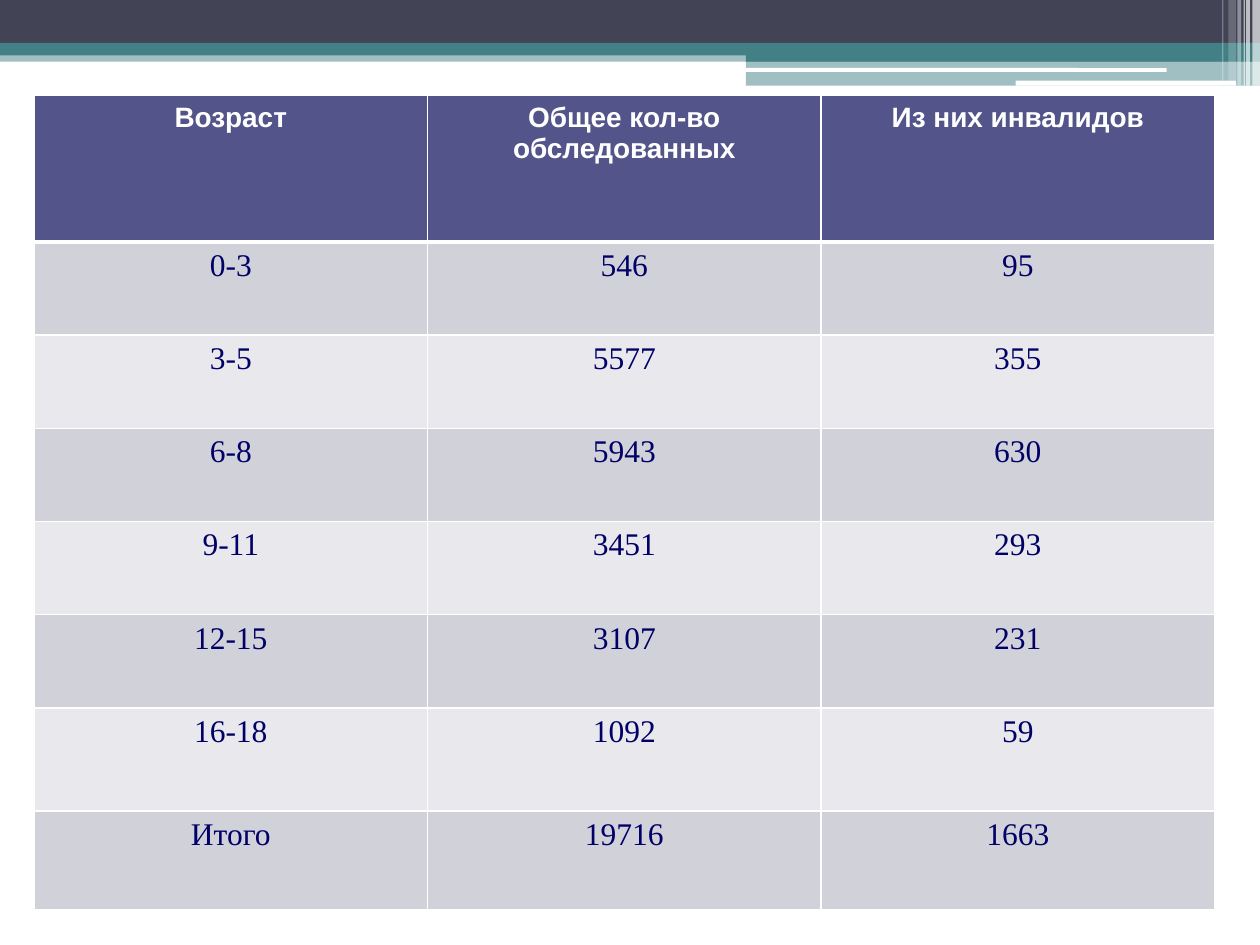
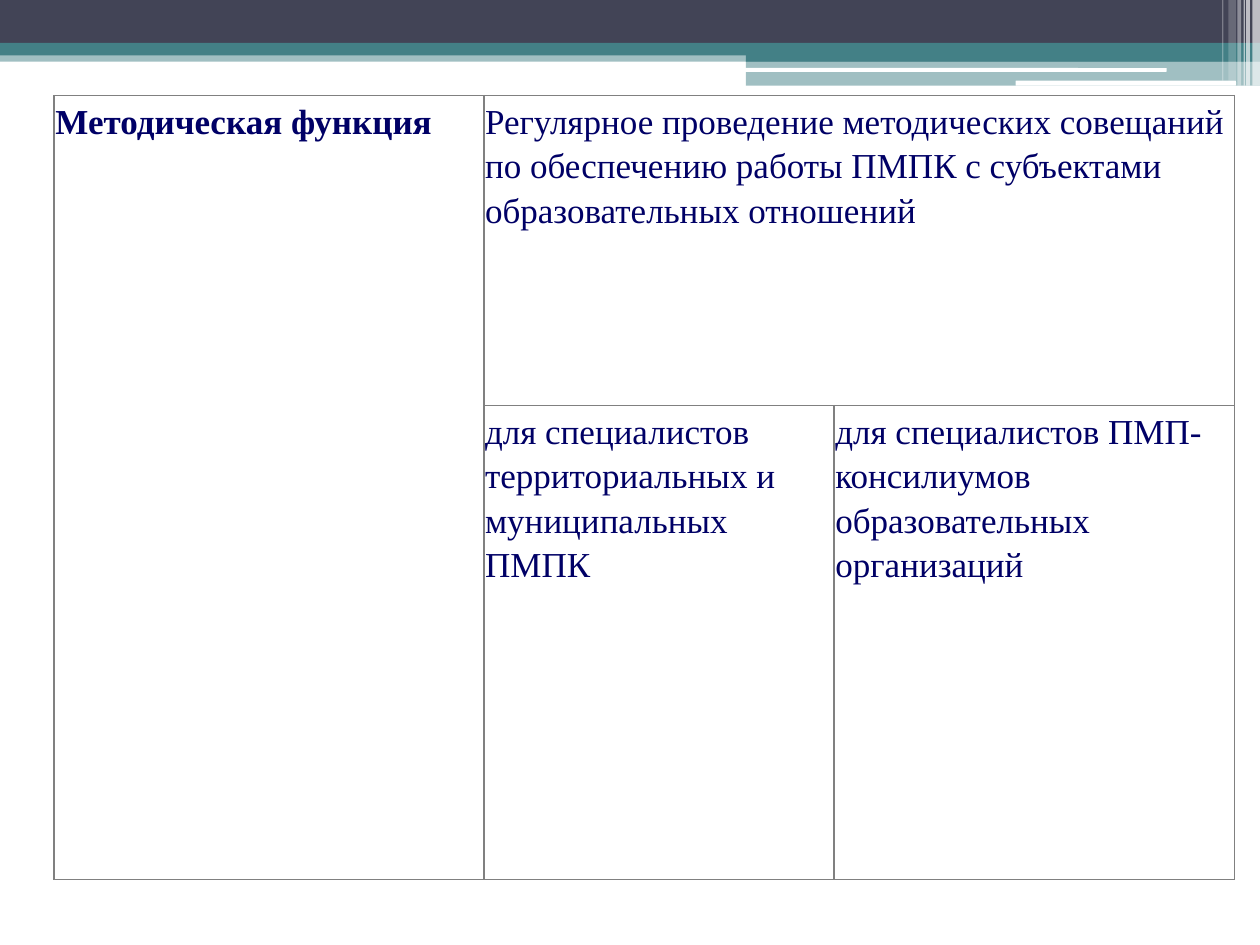
from pptx import Presentation
from pptx.dml.color import RGBColor
from pptx.enum.shapes import MSO_SHAPE as Preset
from pptx.enum.text import PP_ALIGN as Align
from pptx.oxml.ns import qn
from pptx.util import Inches, Pt
from lxml.etree import SubElement

COLORS = {
    "dark": "424456", "teal": "438086", "white": "FFFFFF", "header": "53548A",
    "odd_row": "D1D1DA", "even_row": "E9E9ED", "ink": "000066", "grid": "808080",
}
HEADER_FONT = {"name": "Arial", "size": Pt(16), "bold": True}
BODY_FONT = {"name": "Times New Roman", "size": Pt(18), "bold": False}
FUNCTION_FONT = BODY_FONT | {"size": Pt(20)}

BANDS = [
    (0, 0.4, 10, 0.09, "teal", 50),
    (0, 0, 10, 0.34, "dark", 100),
    (0, 0.34, 10, 0.1, "teal", 100),
    (5.92, 0.39, 4.08, 0.1, "teal", 100),
    (5.92, 0.48, 4.08, 0.2, "teal", 50),
]
WHITE_BARS = [(5.91, 0.54, 3.35, 0.03), (8.06, 0.64, 1.75, 0.04)]
STRIPES = [
    (9.94, 0.06, 0.68, 65), (9.89, 0.03, 0.68, 65), (9.87, 0.01, 0.68, 60),
    (9.82, 0.03, 0.68, 40), (9.75, 0.06, 0.64, 20), (9.7, 0.01, 0.64, 30),
]

AGE_ROWS = [
    ("Возраст", "Общее кол-во обследованных", "Из них инвалидов"),
    ("0-3", "546", "95"),
    ("3-5", "5577", "355"),
    ("6-8", "5943", "630"),
    ("9-11", "3451", "293"),
    ("12-15", "3107", "231"),
    ("16-18", "1092", "59"),
    ("Итого", "19716", "1663"),
]
FUNCTION_TEXTS = {
    (0, 0): "Методическая функция",
    (0, 1): "Регулярное проведение методических совещаний по обеспечению "
            "работы ПМПК с субъектами образовательных отношений",
    (1, 1): "для специалистов территориальных и муниципальных ПМПК",
    (1, 2): "для специалистов ПМП-консилиумов образовательных организаций",
}


def color(name):
    return RGBColor.from_string(COLORS[name])


def apply_format(target, values):
    for name, value in values.items():
        setattr(target, name, value)


def add_block(slide, preset, left, top, width, height, fill, opacity=100):
    shape = slide.shapes.add_shape(preset, *map(Inches, (left, top, width, height)))
    shape.shadow.inherit = False
    shape.line.fill.background()
    shape.fill.solid()
    shape.fill.fore_color.rgb = color(fill)
    if opacity < 100:
        tint = shape.fill._xPr.find(qn("a:solidFill"))[0]
        SubElement(tint, qn("a:alpha"), val=str(opacity * 1000))


def add_top_band(slide):
    for *box, fill, opacity in BANDS:
        add_block(slide, Preset.RECTANGLE, *box, fill, opacity)
    for box in WHITE_BARS:
        add_block(slide, Preset.ROUNDED_RECTANGLE, *box, "white")
    for left, width, height, opacity in STRIPES:
        add_block(slide, Preset.RECTANGLE, left, 0, width, height, "white", opacity)


def add_grid(slide, box, widths, heights):
    frame = slide.shapes.add_table(len(heights), len(widths), *map(Inches, box))
    table = frame.table
    apply_format(table, {"first_row": False, "horz_banding": False})
    for column, width in zip(table.columns, widths):
        column.width = Inches(width)
    for row, height in zip(table.rows, heights):
        row.height = Inches(height)
    return table


def set_borders(cell, line_color, widths=(1, 1, 1, 1)):
    properties = cell._tc.get_or_add_tcPr()
    for side, width in zip("LRTB", widths):
        line = SubElement(properties, qn(f"a:ln{side}"), w=str(Pt(width)))
        fill = SubElement(line, qn("a:solidFill"))
        SubElement(fill, qn("a:srgbClr"), val=COLORS[line_color])


def write_cell(cell, text, font, font_color, paragraph_format):
    paragraph = cell.text_frame.paragraphs[0]
    apply_format(paragraph, paragraph_format)
    run = paragraph.add_run()
    run.text = text
    apply_format(run.font, font)
    run.font.color.rgb = color(font_color)


def add_age_table(slide, box):
    left, top, width, height = box
    heights = [1.16] + [0.74] * 5 + [0.82, 0.78]
    table = add_grid(slide, box, [width / 3] * 3, heights)
    for row_index, texts in enumerate(AGE_ROWS):
        is_header = row_index == 0
        fill = "header" if is_header else ("even_row", "odd_row")[row_index % 2]
        font = HEADER_FONT if is_header else BODY_FONT
        top_width = 3 if row_index == 1 else 1
        bottom_width = 3 if is_header else 1
        for column_index, text in enumerate(texts):
            cell = table.cell(row_index, column_index)
            set_borders(cell, "white", (1, 1, top_width, bottom_width))
            cell.fill.solid()
            cell.fill.fore_color.rgb = color(fill)
            write_cell(cell, text, font, "white" if is_header else "ink",
                       {"alignment": Align.CENTER})


def add_function_table(slide, box):
    table = add_grid(slide, box, [3.41, 2.78, 3.18], [2.46, 3.76])
    margins = {f"margin_{side}": Inches(0.01) for side in ("left", "right", "top", "bottom")}
    for cell in table.iter_cells():
        apply_format(cell, margins)
        set_borders(cell, "grid")
        cell.fill.background()
    table.cell(0, 0).merge(table.cell(1, 0))
    table.cell(0, 1).merge(table.cell(0, 2))
    for position, text in FUNCTION_TEXTS.items():
        write_cell(table.cell(*position), text,
                   FUNCTION_FONT | {"bold": position == (0, 0)}, "ink",
                   {"line_spacing": 1.15, "space_after": Pt(10)})


def main():
    presentation = Presentation()
    apply_format(presentation, {"slide_width": Inches(10), "slide_height": Inches(7.5)})
    blank_layout = presentation.slide_layouts.get_by_name("Blank")
    contents = [
        (add_age_table, (0.27, 0.76, 9.37, 6.46)),
        (add_function_table, (0.43, 0.76, 9.37, 6.22)),
    ]
    for add_content, box in contents:
        slide = presentation.slides.add_slide(blank_layout)
        add_top_band(slide)
        add_content(slide, box)
    presentation.save("out.pptx")


if __name__ == "__main__":
    main()
